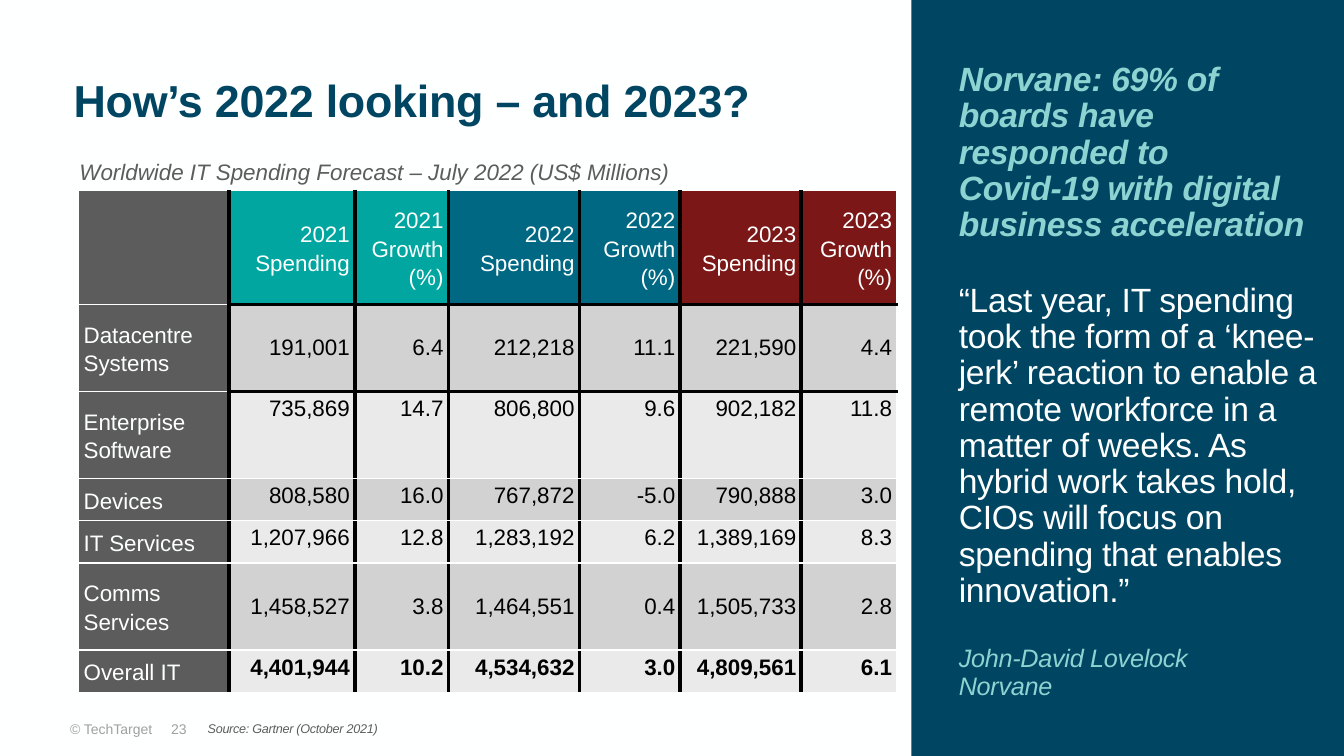
from lxml import etree
from pptx import Presentation
from pptx.dml.color import RGBColor
from pptx.enum.shapes import MSO_SHAPE
from pptx.enum.text import MSO_ANCHOR, MSO_AUTO_SIZE, PP_ALIGN
from pptx.oxml.ns import qn
from pptx.util import Inches, Pt

TOP, MIDDLE = MSO_ANCHOR.TOP, MSO_ANCHOR.MIDDLE
LEFT, RIGHT = PP_ALIGN.LEFT, PP_ALIGN.RIGHT
FIXED = MSO_AUTO_SIZE.NONE
RECTANGLE = MSO_SHAPE.RECTANGLE

SLIDE_WIDTH, SLIDE_HEIGHT = Inches(13.33), Inches(7.5)
GRID_COLUMNS, GRID_ROWS = 160, 90
MAIN_BOX = (8, 6, 100, 76)
SIDEBAR_BOX = (108.5, 0, 51.5, 90)
FOOTER_BOX = (5, 85.2, 100, 4.5)

FONT = "Arial"
WHITE, BLACK = "FEFFFF", "000000"
NAVY, AQUA = "004562", "8CD3D1"
DARK_GREY, PALE_GREY = "5C5C5C", "A0A0A0"
BANDS = ("D2D2D2", "EAEAEA")
YEARS = {"2021": "00A69F", "2022": "006883", "2023": "7B1716"}

COLUMN_SPANS = (17.88, 15, 11.16, 15.6, 12, 14.4, 11.4)
HEADER_SPAN, TALL_SPAN, SHORT_SPAN = 13.56, 10.36, 5.04
FORECAST = [
    ("Datacentre Systems", "191,001", "6.4", "212,218", "11.1", "221,590", "4.4"),
    ("Enterprise Software", "735,869", "14.7", "806,800", "9.6", "902,182", "11.8"),
    ("Devices", "808,580", "16.0", "767,872", "-5.0", "790,888", "3.0"),
    ("IT Services", "1,207,966", "12.8", "1,283,192", "6.2", "1,389,169", "8.3"),
    ("Comms Services", "1,458,527", "3.8", "1,464,551", "0.4", "1,505,733", "2.8"),
    ("Overall IT", "4,401,944", "10.2", "4,534,632", "3.0", "4,809,561", "6.1"),
]
TALL_ROWS = ("Datacentre Systems", "Enterprise Software", "Comms Services")
CENTRED_ROWS = ("Datacentre Systems", "Comms Services")
TOTAL_ROW = "Overall IT"


def color(value):
    """Turn a hex string into a colour."""
    return RGBColor.from_string(value)


def across(columns):
    """Return the length of a number of grid columns."""
    return int(SLIDE_WIDTH * columns / GRID_COLUMNS)


def down(rows):
    """Return the length of a number of grid rows."""
    return int(SLIDE_HEIGHT * rows / GRID_ROWS)


def place(box, left, top, width, height):
    """Return slide lengths for a part positioned relative to its region."""
    return across(box[0] + left), down(box[1] + top), across(width), down(height)


def write(paragraph, text, size, ink, bold=False, italic=False,
          align=LEFT, spacing=0.9, tight=False):
    """Write one formatted paragraph."""
    properties = paragraph._p.get_or_add_pPr()
    properties.set("marL", "0")
    properties.set("indent", "0")
    etree.SubElement(properties, qn("a:buNone"))
    paragraph.text = text
    paragraph.alignment = align
    paragraph.line_spacing = spacing
    paragraph.space_before = paragraph.space_after = Pt(0)
    font = paragraph.font
    font.name, font.size, font.bold, font.italic = FONT, Pt(size), bold, italic
    font.color.rgb = color(ink)
    if tight:
        for run in paragraph.runs:
            run._r.get_or_add_rPr().set("spc", "-20")


def frame(part, bounds, inset, anchor):
    """Move a text holder and prepare its frame."""
    part.left, part.top, part.width, part.height = bounds
    text_frame = part.text_frame
    text_frame.auto_size = FIXED
    text_frame.word_wrap = True
    text_frame.vertical_anchor = anchor
    text_frame.margin_left = text_frame.margin_right = Inches(inset)
    text_frame.margin_top = text_frame.margin_bottom = Inches(inset)
    return text_frame


def label(slide, bounds, text, size, ink, **style):
    """Add a single-line label."""
    text_frame = slide.shapes.add_textbox(*bounds).text_frame
    text_frame.word_wrap = True
    text_frame.vertical_anchor = MIDDLE
    write(text_frame.paragraphs[0], text, size, ink, spacing=1, **style)


def draw_borders(cell, row, column):
    """Rule a cell in black between columns and around the first data row."""
    edges = {
        "lnL": column > 0,
        "lnR": column < len(COLUMN_SPANS) - 1,
        "lnT": column > 0 and row in (1, 2),
        "lnB": column > 0 and row in (0, 1),
    }
    properties = cell._tc.get_or_add_tcPr()
    for tag, heavy in edges.items():
        width = Pt(3 if heavy else 1)
        line = etree.SubElement(properties, qn(f"a:{tag}"), w=str(width))
        fill = etree.SubElement(line, qn("a:solidFill"))
        etree.SubElement(fill, qn("a:srgbClr"), val=BLACK if heavy else WHITE)


def fill_cell(cell, row, column, text, fill, ink, anchor, **style):
    """Fill, rule and write one table cell."""
    draw_borders(cell, row, column)
    cell.fill.solid()
    cell.fill.fore_color.rgb = color(fill)
    cell.vertical_anchor = anchor
    cell.margin_left = cell.margin_right = Inches(0.05)
    cell.margin_top = cell.margin_bottom = Inches(0.05)
    write(cell.text_frame.paragraphs[0], text, 16, ink, **style)


def build_forecast(slide, box):
    """Build the spending table."""
    row_spans = [HEADER_SPAN] + [
        TALL_SPAN if entry[0] in TALL_ROWS else SHORT_SPAN for entry in FORECAST]
    bounds = place(box, 1.36, 16.68, sum(COLUMN_SPANS), sum(row_spans))
    forecast = slide.shapes.add_table(
        len(row_spans), len(COLUMN_SPANS), *bounds).table
    forecast.first_row = forecast.horz_banding = False
    for column, span in zip(forecast.columns, COLUMN_SPANS):
        column.width = across(span)
    for row, span in zip(forecast.rows, row_spans):
        row.height = down(span)

    headings = [("", DARK_GREY)] + [
        (f"{year} {measure}", fill) for year, fill in YEARS.items()
        for measure in ("Spending", "Growth (%)")]
    for column, (heading, fill) in enumerate(headings):
        fill_cell(forecast.cell(0, column), 0, column, heading, fill, WHITE,
                  MIDDLE, align=RIGHT, spacing=1.15)
    for row, (segment, *amounts) in enumerate(FORECAST, 1):
        fill_cell(forecast.cell(row, 0), row, 0, segment, DARK_GREY, WHITE,
                  MIDDLE, spacing=1.15)
        anchor = MIDDLE if segment in CENTRED_ROWS else TOP
        for column, amount in enumerate(amounts, 1):
            fill_cell(forecast.cell(row, column), row, column, amount,
                      BANDS[(row - 1) % 2], BLACK, anchor, align=RIGHT,
                      spacing=1, bold=segment == TOTAL_ROW)


def build_main(slide, box):
    """Build the title, caption and table."""
    title = frame(slide.shapes.title, place(box, 0.16, 0.24, 94.68, 12), 0.05, MIDDLE)
    write(title.paragraphs[0], "How’s 2022 looking – and 2023?", 32, NAVY,
          bold=True, tight=True)
    label(slide, place(box, 0.28, 12.24, 76, 4.44),
          "Worldwide IT Spending Forecast – July 2022 (US$ Millions)",
          16, DARK_GREY, italic=True)
    build_forecast(slide, box)


def build_sidebar(slide, box, headline, quote):
    """Build the coloured panel with its headline and quotation."""
    panel = slide.shapes.add_shape(RECTANGLE, *place(box, 0, 0, *box[2:]))
    panel.shadow.inherit = False
    panel.fill.solid()
    panel.fill.fore_color.rgb = color(NAVY)
    panel.line.fill.background()
    slide.shapes._spTree.insert(2, panel._element)

    claim = frame(headline, place(box, 5.64, 12.24, 41.4, 12), 0, MIDDLE)
    write(claim.paragraphs[0],
          "Norvane: 69% of boards have responded to\v"
          "Covid-19 with digital business acceleration",
          24, AQUA, bold=True, italic=True, tight=True)
    remark = frame(quote, place(box, 5.64, 33.72, 45.36, 55.32), 0, TOP)
    write(remark.paragraphs[0],
          "“Last year, IT spending took the form of a ‘knee-jerk’ reaction to "
          "enable a remote workforce in a matter of weeks. As hybrid work takes "
          "hold, CIOs will focus on spending that enables innovation.”",
          24, WHITE, tight=True)
    speaker = remark.add_paragraph()
    write(speaker, "John-David Lovelock\vNorvane", 18, AQUA, italic=True, tight=True)
    speaker.space_before = Pt(26)


def build_footer(slide, box, source):
    """Build the copyright line, page number and source."""
    label(slide, place(box, 0, 0, 14.3, 3.24), "© TechTarget", 10, PALE_GREY,
          align=RIGHT)
    label(slide, place(box, 14.2, 0, 7, 3.24), "23", 10, PALE_GREY)
    credit = frame(source, place(box, 19.12, 0.24, 78.36, 4.32), 0.05, TOP)
    write(credit.paragraphs[0], "Source: Gartner (October 2021)", 9, DARK_GREY,
          italic=True, tight=True)


def main():
    """Create the presentation."""
    deck = Presentation()
    deck.slide_width, deck.slide_height = SLIDE_WIDTH, SLIDE_HEIGHT
    slide = deck.slides.add_slide(deck.slide_layouts.get_by_name("Comparison"))
    slide.background.fill.solid()
    slide.background.fill.fore_color.rgb = color(WHITE)
    _, source, quote, headline, spare = slide.placeholders
    spare._element.getparent().remove(spare._element)
    build_main(slide, MAIN_BOX)
    build_sidebar(slide, SIDEBAR_BOX, headline, quote)
    build_footer(slide, FOOTER_BOX, source)
    deck.save("out.pptx")


if __name__ == "__main__":
    main()
